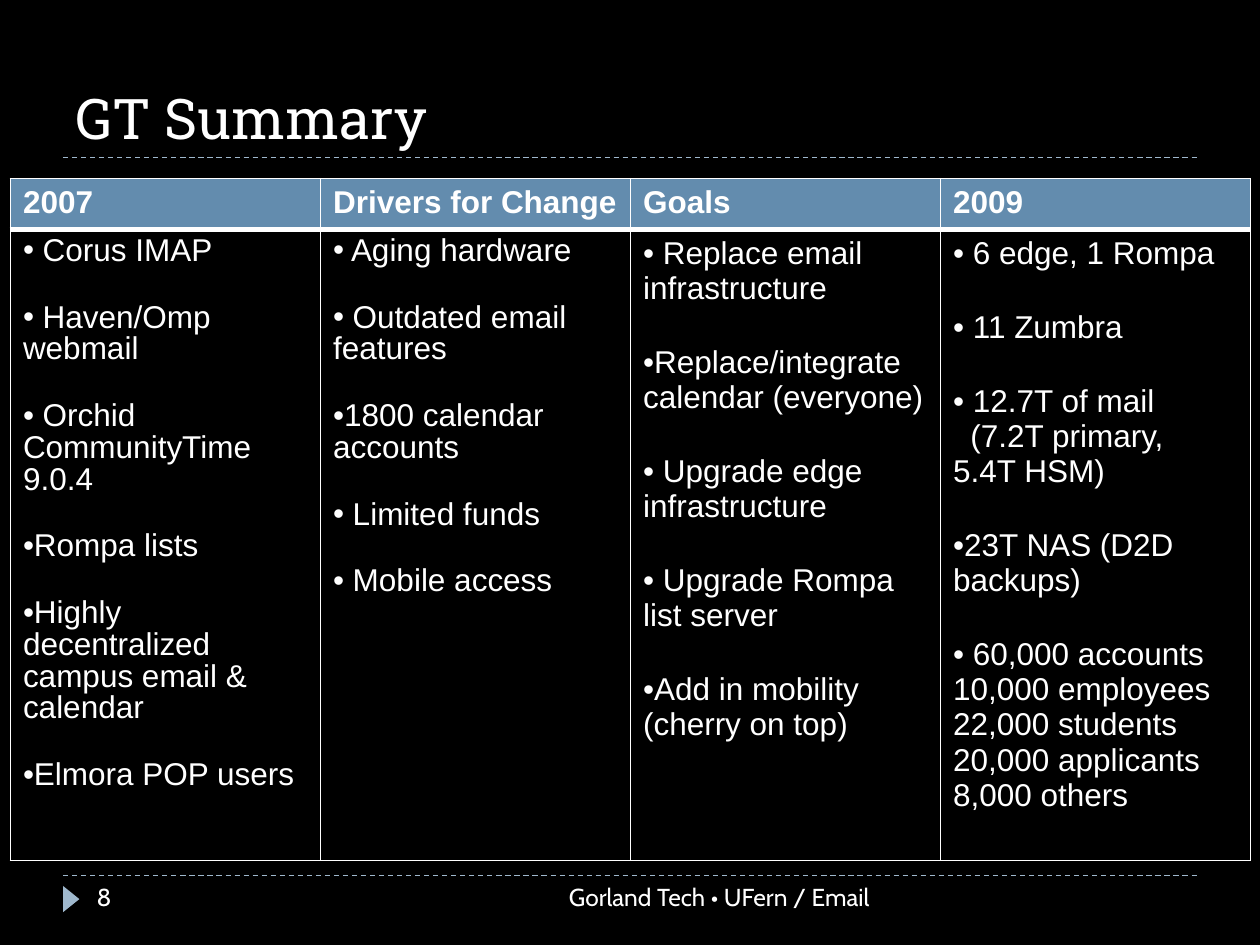
from lxml.etree import SubElement
from pptx import Presentation
from pptx.dml.color import RGBColor
from pptx.enum.dml import MSO_LINE
from pptx.enum.shapes import MSO_CONNECTOR, MSO_SHAPE
from pptx.enum.text import MSO_ANCHOR, PP_ALIGN
from pptx.oxml.ns import qn
from pptx.util import Cm, Pt

WHITE, BLACK, STEEL, PALE = "FFFFFF", "000000", "638CAE", "9FB8CD"

# Each column: heading, line spacing, gap between items in points, items.
# The first line of an item has a bullet; the others follow without one.
COLUMNS = [
    ("2007", 0.9, 20, [
        [" Corus IMAP"],
        [" Haven/Omp webmail"],
        [" Orchid CommunityTime 9.0.4"],
        ["Rompa lists"],
        ["Highly decentralized campus email & calendar"],
        ["Elmora POP users"],
    ]),
    ("Drivers for Change", 0.9, 20, [
        [" Aging hardware"],
        [" Outdated email features"],
        ["1800 calendar accounts"],
        [" Limited funds"],
        [" Mobile access"],
    ]),
    ("Goals", 1.0, 22, [
        [" Replace email infrastructure"],
        ["Replace/integrate calendar (everyone)"],
        [" Upgrade edge infrastructure"],
        [" Upgrade Rompa list server"],
        ["Add in mobility (cherry on top)"],
    ]),
    ("2009", 1.0, 22, [
        [" 6 edge, 1 Rompa"],
        [" 11 Zumbra"],
        [" 12.7T of mail", "(7.2T primary,\v5.4T HSM)"],
        ["23T NAS (D2D backups)"],
        [" 60,000 accounts", "10,000 employees 22,000 students",
         "20,000 applicants 8,000 others"],
    ]),
]
TEXTS = [  # text, left, top, width, height, size, font, align, anchor
    ("GT Summary", 1.27, 0.43, 22.86, 2.74, 32, "Roboto Slab",
     PP_ALIGN.LEFT, MSO_ANCHOR.BOTTOM),
    ("Gorland Tech • UFern / Email", 8.05, 17.65, 9.73, 1.02, 14, "Cabin",
     PP_ALIGN.RIGHT, MSO_ANCHOR.TOP),
    ("8", 1.7, 17.65, 5.51, 1.02, 14, "Cabin",
     PP_ALIGN.LEFT, MSO_ANCHOR.TOP),
]
RULES = [3.17, 17.65]
COL, HEAD, BODY = 6.25, 1.03, 12.72


def color(code):
    return RGBColor.from_string(code)


def style(para, size, font, bold=False):
    for run in para.runs:
        run.font.size = Pt(size)
        run.font.name = font
        run.font.bold = bold
        run.font.color.rgb = color(WHITE)


def border(cell, base):
    """Draw white cell edges; base is the width of the lower one."""
    props = cell._tc.get_or_add_tcPr()
    for side, width in (("L", 1), ("R", 1), ("T", 1), ("B", base)):
        line = SubElement(props, qn(f"a:ln{side}"), w=str(Pt(width)))
        fill = SubElement(line, qn("a:solidFill"))
        SubElement(fill, qn("a:srgbClr"), val=WHITE)


def mark(para, bullet, indent):
    props = para._p.get_or_add_pPr()
    props.set("marL", "0")
    props.set("indent", str(Cm(indent)))
    if bullet:
        SubElement(props, qn("a:buFont"), typeface="Arial")
        SubElement(props, qn("a:buChar"), char="•")
    else:
        SubElement(props, qn("a:buNone"))


def fill_body(frame, pitch, gap, items):
    first = True
    for item in items:
        for i, line in enumerate(item):
            para = frame.paragraphs[0] if first else frame.add_paragraph()
            first = False
            para.text = line
            para.line_spacing = pitch
            para.space_after = Pt(gap if i == len(item) - 1 else 0)
            mark(para, i == 0, 0.35 if line.startswith("(") else 0)
            style(para, 18, "Arial")


def add_grid(slide):
    table = slide.shapes.add_table(
        2, len(COLUMNS), Cm(0.21), Cm(3.6),
        Cm(COL * len(COLUMNS)), Cm(HEAD + BODY)).table
    table.horz_banding = False
    table.rows[0].height, table.rows[1].height = Cm(HEAD), Cm(BODY)
    for i, (head, pitch, gap, items) in enumerate(COLUMNS):
        table.columns[i].width = Cm(COL)
        top, body = table.cell(0, i), table.cell(1, i)
        border(top, 3)
        border(body, 1)
        for cell, code in ((top, STEEL), (body, BLACK)):
            cell.fill.solid()
            cell.fill.fore_color.rgb = color(code)
        top.text_frame.text = head
        style(top.text_frame.paragraphs[0], 18, "Arial", True)
        fill_body(body.text_frame, pitch, gap, items)


def add_rule(slide, y):
    rule = slide.shapes.add_connector(
        MSO_CONNECTOR.STRAIGHT, Cm(1.27), Cm(y), Cm(24.13), Cm(y))
    rule.line.color.rgb = color(PALE)
    rule.line.width = Pt(0.75)
    rule.line.dash_style = MSO_LINE.DASH
    SubElement(rule._element.spPr, qn("a:effectLst"))


def add_arrow(slide):
    arrow = slide.shapes.add_shape(
        MSO_SHAPE.ISOSCELES_TRIANGLE, Cm(1.17), Cm(17.96), Cm(0.53), Cm(0.33))
    arrow.rotation = 90
    arrow.shadow.inherit = False
    arrow.fill.solid()
    arrow.fill.fore_color.rgb = color(PALE)
    arrow.line.fill.background()


def add_text(slide, text, x, y, w, h, size, font, align, anchor):
    frame = slide.shapes.add_textbox(Cm(x), Cm(y), Cm(w), Cm(h)).text_frame
    frame.word_wrap = True
    frame.vertical_anchor = anchor
    frame.text = text
    para = frame.paragraphs[0]
    para.alignment = align
    style(para, size, font)


def main():
    deck = Presentation()
    deck.slide_width, deck.slide_height = Cm(25.4), Cm(19.05)
    slide = deck.slides.add_slide(deck.slide_layouts[6])
    slide.background.fill.solid()
    slide.background.fill.fore_color.rgb = color(BLACK)
    for y in RULES:
        add_rule(slide, y)
    add_arrow(slide)
    add_grid(slide)
    for text in TEXTS:
        add_text(slide, *text)
    deck.save("out.pptx")


if __name__ == "__main__":
    main()
